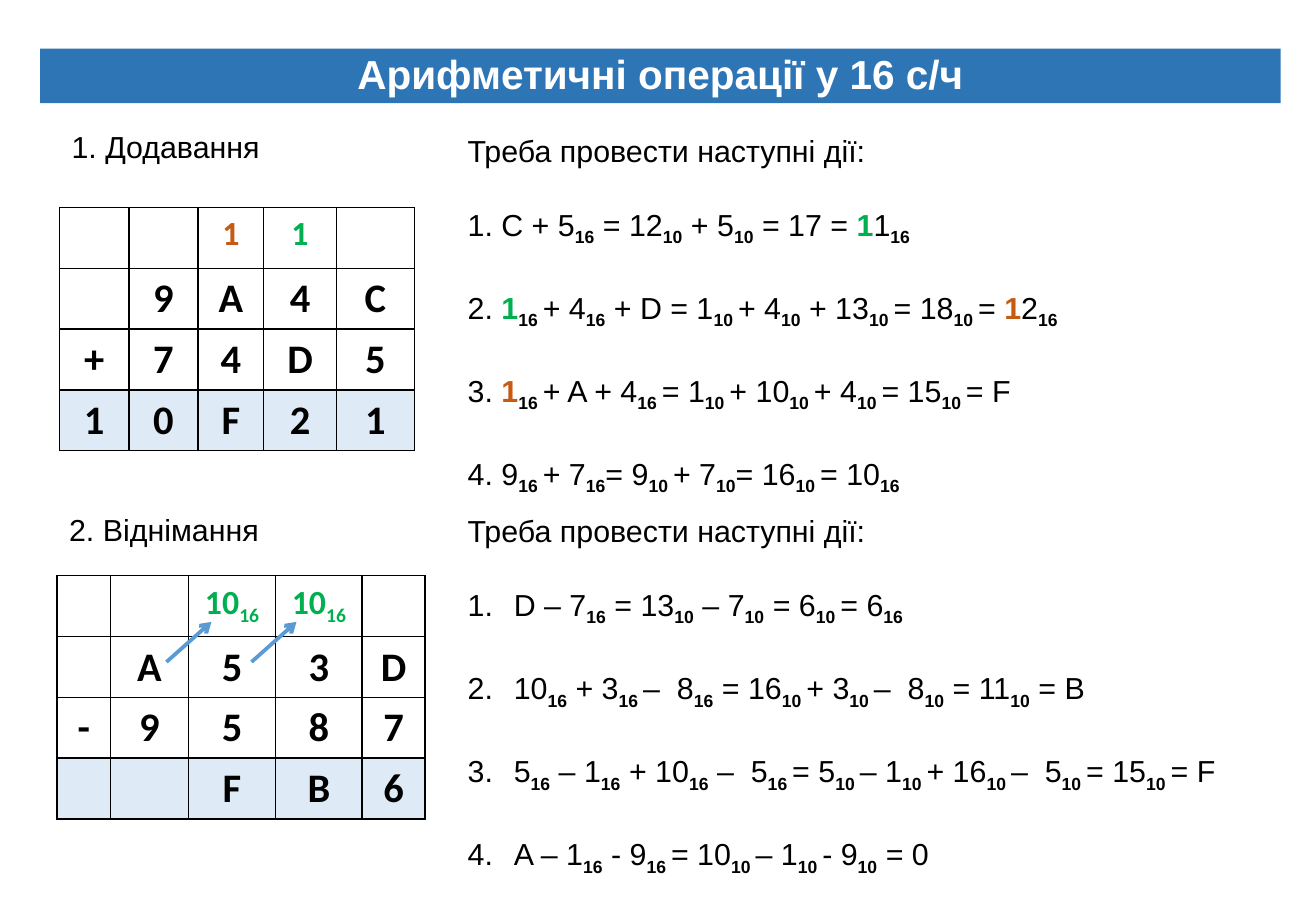
import pptx
import pptx.dml.color
import pptx.enum.shapes
import pptx.enum.text
import pptx.oxml
import pptx.oxml.ns
import pptx.util
from lxml import etree

Inches = pptx.util.Inches
Pt = pptx.util.Pt
qn = pptx.oxml.ns.qn
COLORS = {
    "banner": "2E75B6", "white": "FFFFFF", "black": "000000", "green": "00B050",
    "orange": "C55A11", "result": "DEEBF7", "arrow": "5B9BD5",
}
MARKS = {"^": "green", "*": "orange"}


def rgb(name):
    return pptx.dml.color.RGBColor.from_string(COLORS[name])


# Segments are split by "|": ^ green, * orange, _ subscript
def add_runs(paragraph, text, font, size, color="black", bold=False):
    for segment in text.split("|"):
        mark = MARKS.get(segment[:1])
        segment = segment[1:] if mark else segment
        subscript = segment.startswith("_")
        run = paragraph.add_run()
        run.text = segment[1:] if subscript else segment
        run.font.name = font
        run.font.size = Pt(size)
        run.font.bold = bool(bold or mark or subscript)
        run.font.color.rgb = rgb(mark or color)
        if subscript:
            run.font._element.set("baseline", "-25000")


presentation = pptx.Presentation()
presentation.slide_width = Inches(10.83)
presentation.slide_height = Inches(7.5)
slide = presentation.slides.add_slide(presentation.slide_layouts[6])

banner = slide.shapes.add_shape(
    pptx.enum.shapes.MSO_SHAPE.RECTANGLE, Inches(0.33), Inches(0.4), Inches(10.21), Inches(0.45))
banner.shadow.inherit = False
banner.fill.solid()
banner.fill.fore_color.rgb = rgb("banner")
banner.line.fill.background()
banner_text = banner.text_frame
banner_text.word_wrap = True
banner_text.vertical_anchor = pptx.enum.text.MSO_ANCHOR.BOTTOM
banner_text.margin_left = banner_text.margin_right = Inches(0.08)
banner_text.margin_top = banner_text.margin_bottom = Inches(0.04)
banner_title = banner_text.paragraphs[0]
banner_title.alignment = pptx.enum.text.PP_ALIGN.CENTER
banner_title.line_spacing = 0.9
add_runs(banner_title, "Арифметичні операції у 16 с/ч", "Arial", 24, "white", True)

for operation, left, top in [("1. Додавання", 0.49, 1.01), ("2. Віднімання", 0.47, 4.16)]:
    heading = slide.shapes.add_textbox(Inches(left), Inches(top), Inches(1.78), Inches(0.4))
    heading.text_frame.word_wrap = False
    add_runs(heading.text_frame.paragraphs[0], operation, "Arial", 18)

addition_steps = [
    "1. C + 5|_16| = 12|_10| + 5|_10| = 17 = |^1|1|_16",
    "2. |^1|_16 |+ 4|_16| + D = 1|_10 |+ 4|_10| + 13|_10 |= 18|_10 |= |*1|2|_16",
    "3. |*1|_16 |+ A + 4|_16 |= 1|_10 |+ 10|_10 |+ 4|_10 |= 15|_10 |= F",
    "4. 9|_16 |+ 7|_16|= 9|_10 |+ 7|_10|= 16|_10 |= 10|_16",
]
subtraction_steps = [
    "D – 7|_16| = 13|_10| – 7|_10| = 6|_10 |= 6|_16",
    "10|_16| + 3|_16 |–  8|_16| = 16|_10 |+ 3|_10 |–  8|_10| = 11|_10| = B",
    "5|_16| – 1|_16| + 10|_16| –  5|_16 |= 5|_10 |– 1|_10 |+ 16|_10 |–  5|_10 |= 15|_10 |= F",
    "A – 1|_16| - 9|_16 |= 10|_10 |– 1|_10 |- 9|_10| = 0",
]
for steps, top, numbered in [(addition_steps, 1.04, False), (subtraction_steps, 4.17, True)]:
    explanation = slide.shapes.add_textbox(Inches(3.75), Inches(top), Inches(6.79), Inches(3.1))
    explanation.text_frame.word_wrap = True
    add_runs(explanation.text_frame.paragraphs[0], "Треба провести наступні дії:", "Arial", 18)
    for index, step in enumerate(steps):
        line = explanation.text_frame.add_paragraph()
        line.space_before = Pt(24.7 if index else 22)
        if numbered:
            properties = line._p.get_or_add_pPr()
            properties.set("marL", str(Inches(0.38)))
            properties.set("indent", str(-Inches(0.38)))
            etree.SubElement(properties, qn("a:buAutoNum"), type="arabicPeriod")
        add_runs(line, step, "Arial", 18)

addition = [
    ["", "", "*1", "^1", ""],
    ["", "9", "A", "4", "C"],
    ["+", "7", "4", "D", "5"],
    ["1", "0", "F", "2", "1"],
]
subtraction = [
    ["", "", "^10|^_16", "^10|^_16", ""],
    ["", "A", "5", "3", "D"],
    ["-", "9", "5", "8", "7"],
    ["", "", "F", "B", "6"],
]
for digits, left, top, widths in [
    (addition, 0.49, 1.71, [0.57, 0.57, 0.54, 0.6, 0.64]),
    (subtraction, 0.47, 4.74, [0.44, 0.64, 0.72, 0.71, 0.52]),
]:
    column_sum = slide.shapes.add_table(
        4, 5, Inches(left), Inches(top), Inches(sum(widths)), Inches(2)).table
    for column, width in zip(column_sum.columns, widths):
        column.width = Inches(width)
    for row, row_digits in enumerate(digits):
        for column, digit in enumerate(row_digits):
            cell = column_sum.cell(row, column)
            cell_properties = cell._tc.get_or_add_tcPr()
            for side in ["a:lnL", "a:lnR", "a:lnT", "a:lnB"]:
                border = etree.SubElement(cell_properties, qn(side), w=str(Pt(1)))
                border_fill = etree.SubElement(border, qn("a:solidFill"))
                etree.SubElement(border_fill, qn("a:srgbClr"), val=COLORS["black"])
            if row == 3:
                cell.fill.solid()
                cell.fill.fore_color.rgb = rgb("result")
            else:
                cell.fill.background()
            if digit:
                paragraph = cell.text_frame.paragraphs[0]
                paragraph.alignment = pptx.enum.text.PP_ALIGN.CENTER
                add_runs(paragraph, digit, "Calibri", 24 if row else 20, bold=True)

for left in [1.37, 2.07]:
    borrow = slide.shapes.add_connector(
        pptx.enum.shapes.MSO_CONNECTOR.STRAIGHT,
        Inches(left), Inches(5.45), Inches(left + 0.37), Inches(5.12))
    borrow.line.color.rgb = rgb("arrow")
    borrow.line.width = Pt(2.25)
    etree.SubElement(borrow.line._get_or_add_ln(), qn("a:tailEnd"), type="arrow")
    etree.SubElement(borrow._element.spPr, qn("a:effectLst"))

presentation.save("out.pptx")
